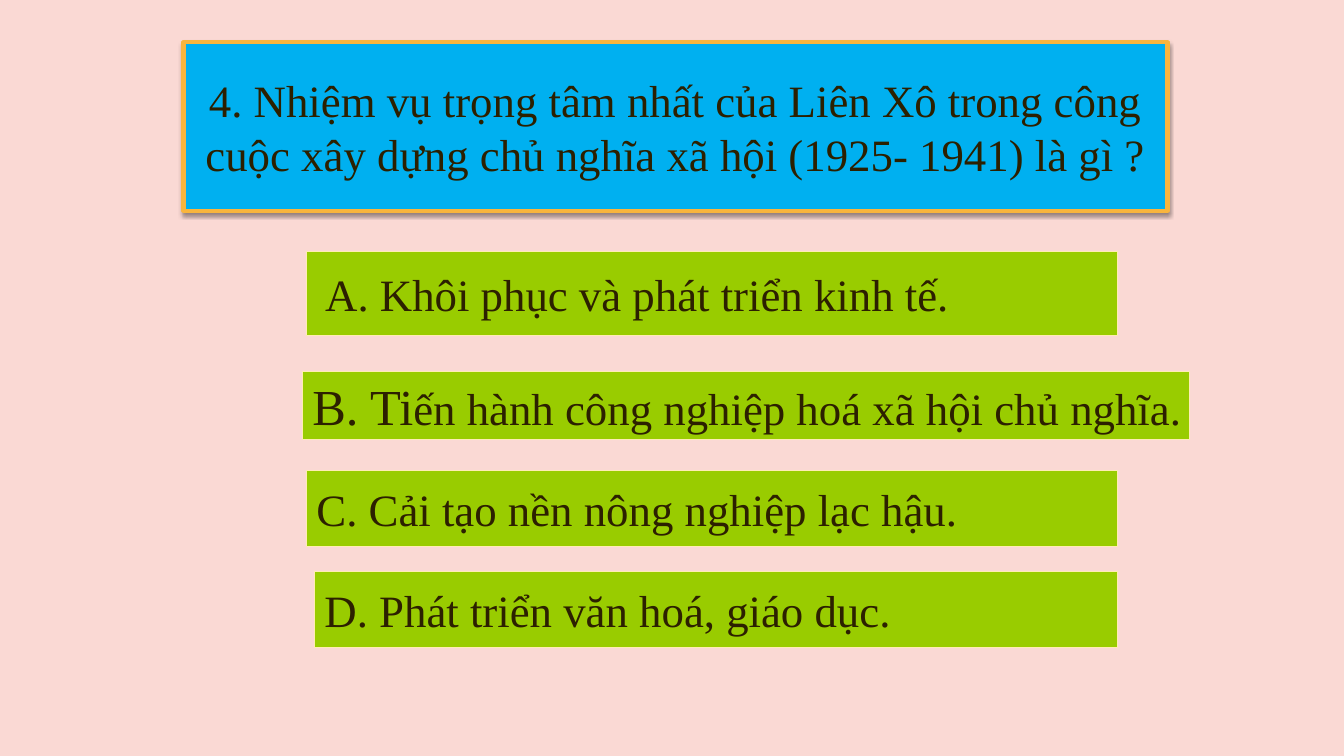
from dataclasses import dataclass

from lxml.etree import SubElement
from pptx import Presentation
from pptx.dml.color import RGBColor
from pptx.enum.shapes import MSO_SHAPE
from pptx.enum.text import MSO_ANCHOR, PP_ALIGN
from pptx.oxml.ns import qn
from pptx.util import Inches, Pt


@dataclass(frozen=True)
class Theme:
    background: str = "FAD9D4"
    question_fill: str = "00B0F0"
    question_line: str = "F9B53D"
    answer_fill: str = "99CC00"
    answer_line: str = "FFECB4"
    text: str = "2C2000"
    shadow: str = "000000"
    font: str = "Times New Roman"
    body: int = 32
    large: int = 36


class QuizSlide:
    def __init__(self, prs, theme):
        self.theme = theme
        self.s = prs.slides.add_slide(prs.slide_layouts[6])
        fill = self.s.background.fill
        fill.solid()
        fill.fore_color.rgb = RGBColor.from_string(theme.background)

    def box(self, at, fill, line, width, runs, align, wrap):
        sp = self.s.shapes.add_shape(MSO_SHAPE.RECTANGLE, *map(Inches, at))
        sp.shadow.inherit = False
        sp.fill.solid()
        sp.fill.fore_color.rgb = RGBColor.from_string(fill)
        sp.line.color.rgb = RGBColor.from_string(line)
        sp.line.width = Pt(width)
        tf = sp.text_frame
        tf.word_wrap = wrap
        tf.vertical_anchor = MSO_ANCHOR.MIDDLE
        p = tf.paragraphs[0]
        p.alignment = align
        p.font.name = self.theme.font
        p.font.size = Pt(self.theme.body)
        p.font.color.rgb = RGBColor.from_string(self.theme.text)
        for text, size in runs:
            r = p.add_run()
            r.text = text
            if size != self.theme.body:
                r.font.size = Pt(size)
        return sp

    def add_shadow(self, sp):
        effects = sp._element.spPr.find(qn("a:effectLst"))
        shadow = SubElement(effects, qn("a:outerShdw"), blurRad=str(Pt(3.1)),
                            dist=str(Pt(1.6)), dir="5400000", rotWithShape="0")
        color = SubElement(shadow, qn("a:srgbClr"), val=self.theme.shadow)
        SubElement(color, qn("a:alpha"), val="38000")

    def question(self, at, text):
        t = self.theme
        sp = self.box(at, t.question_fill, t.question_line, 3,
                      [(text, t.body)], PP_ALIGN.CENTER, True)
        self.add_shadow(sp)

    def answer(self, at, runs):
        t = self.theme
        self.box(at, t.answer_fill, t.answer_line, 0.75, runs, PP_ALIGN.LEFT, False)


def main():
    theme = Theme()
    prs = Presentation()
    prs.slide_width = Inches(13.33)
    prs.slide_height = Inches(7.5)
    quiz = QuizSlide(prs, theme)
    quiz.question((1.82, 0.42, 9.76, 1.67),
                  "4. Nhiệm vụ trọng tâm nhất của Liên Xô trong công cuộc "
                  "xây dựng chủ nghĩa xã hội (1925- 1941) là gì ?")
    answers = [
        ((3.04, 2.5, 8.04, 0.83), [(" A. Khôi phục và phát triển kinh tế.", theme.body)]),
        ((3, 3.69, 8.8, 0.67), [("B. Ti", theme.large),
                                ("ến hành công nghiệp hoá xã hội chủ nghĩa.", theme.body)]),
        ((3.04, 4.67, 8.04, 0.75), [("C. Cải tạo nền nông nghiệp lạc hậu.", theme.body)]),
        ((3.12, 5.67, 7.96, 0.75), [("D. Phát triển văn hoá, giáo dục.", theme.body)]),
    ]
    for at, runs in answers:
        quiz.answer(at, runs)
    prs.save("out.pptx")


if __name__ == "__main__":
    main()
